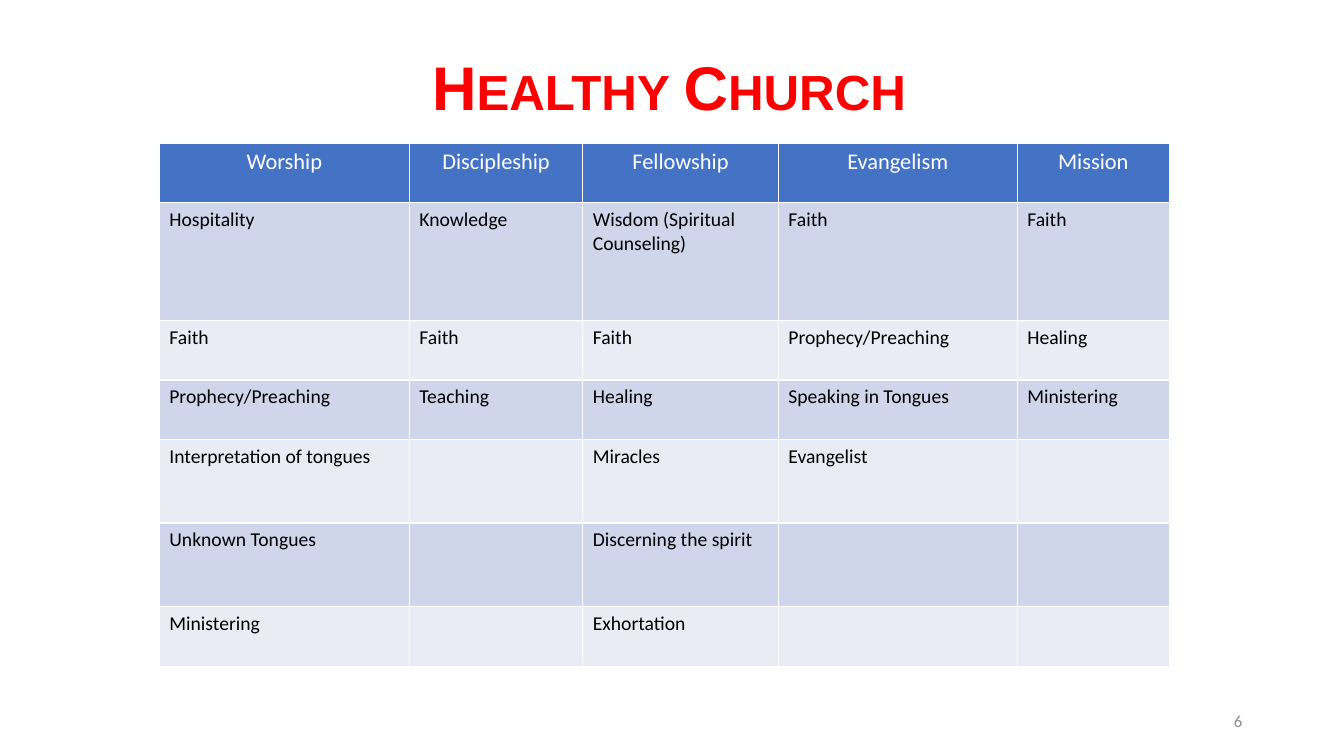
from lxml.etree import SubElement
from pptx import Presentation
from pptx.dml.color import RGBColor
from pptx.enum.text import MSO_ANCHOR as Anchor, PP_ALIGN as Align
from pptx.oxml.ns import qn
from pptx.util import Inches, Pt

COLUMN_WIDTHS = [2.48, 1.72, 1.94, 2.37, 1.51]
ROW_HEIGHTS = [0.59, 1.17, 0.59, 0.59, 0.83, 0.83, 0.59]
HEADER_FILL = "4472C4"
BAND_FILLS = ["E9EBF5", "CFD5EA"]
MINISTRIES = [
    ["Worship", "Discipleship", "Fellowship", "Evangelism", "Mission"],
    ["Hospitality", "Knowledge", "Wisdom (Spiritual Counseling)", "Faith", "Faith"],
    ["Faith", "Faith", "Faith", "Prophecy/Preaching", "Healing"],
    ["Prophecy/Preaching", "Teaching", "Healing", "Speaking in Tongues", "Ministering"],
    ["Interpretation of tongues", "", "Miracles", "Evangelist", ""],
    ["Unknown Tongues", "", "Discerning the spirit", "", ""],
    ["Ministering", "", "Exhortation", "", ""],
]


def color(value):
    return RGBColor.from_string(value)


def add_run(paragraph, text, size, font_color, align, font="Calibri", bold=False):
    paragraph.alignment = align
    run = paragraph.add_run()
    run.text = text
    run.font.name = font
    run.font.size = Pt(size)
    run.font.bold = bold
    run.font.color.rgb = color(font_color)
    return run


def add_text_frame(slide, left, top, width, height, wrap):
    box = slide.shapes.add_textbox(Inches(left), Inches(top), Inches(width), Inches(height))
    frame = box.text_frame
    frame.word_wrap = wrap
    frame.vertical_anchor = Anchor.MIDDLE
    return frame


def set_borders(cell, line_color, width):
    properties = cell._tc.get_or_add_tcPr()
    for side in ("lnL", "lnR", "lnT", "lnB"):
        line = SubElement(properties, qn(f"a:{side}"), w=str(Pt(width)))
        fill = SubElement(line, qn("a:solidFill"))
        SubElement(fill, qn("a:srgbClr"), val=line_color)


def fill_cell(cell, text, is_header, fill_color):
    set_borders(cell, "FFFFFF", 1)
    cell.fill.solid()
    cell.fill.fore_color.rgb = color(fill_color)
    if not text:
        return
    paragraph = cell.text_frame.paragraphs[0]
    if is_header:
        add_run(paragraph, text, 16, "FFFFFF", Align.CENTER)
    else:
        add_run(paragraph, text, 14, "000000", Align.LEFT)


def add_ministry_table(slide, left, top):
    table = slide.shapes.add_table(
        len(ROW_HEIGHTS), len(COLUMN_WIDTHS), Inches(left), Inches(top),
        Inches(sum(COLUMN_WIDTHS)), Inches(sum(ROW_HEIGHTS))).table
    for column, width in zip(table.columns, COLUMN_WIDTHS):
        column.width = Inches(width)
    for row, height in zip(table.rows, ROW_HEIGHTS):
        row.height = Inches(height)
    for row_index, texts in enumerate(MINISTRIES):
        is_header = row_index == 0
        fill_color = HEADER_FILL if is_header else BAND_FILLS[row_index % 2]
        for column_index, text in enumerate(texts):
            fill_cell(table.cell(row_index, column_index), text, is_header, fill_color)


def main():
    presentation = Presentation()
    presentation.slide_width = Inches(13.33)
    presentation.slide_height = Inches(7.5)
    slide = presentation.slides.add_slide(presentation.slide_layouts[6])

    # Slide number
    number = add_text_frame(slide, 9.42, 6.95, 3, 0.4, wrap=True)
    add_run(number.paragraphs[0], "6", 12, "8C8C8C", Align.RIGHT)

    # Title in small capitals
    title = add_text_frame(slide, 4.15, 0.43, 4.97, 0.84, wrap=False)
    run = add_run(title.paragraphs[0], "Healthy Church", 44, "FF0000", Align.CENTER,
                  font="Arial", bold=True)
    run.font._element.set("cap", "small")

    # Gifts listed by ministry
    add_ministry_table(slide, 1.58, 1.42)

    presentation.save("out.pptx")


if __name__ == "__main__":
    main()
